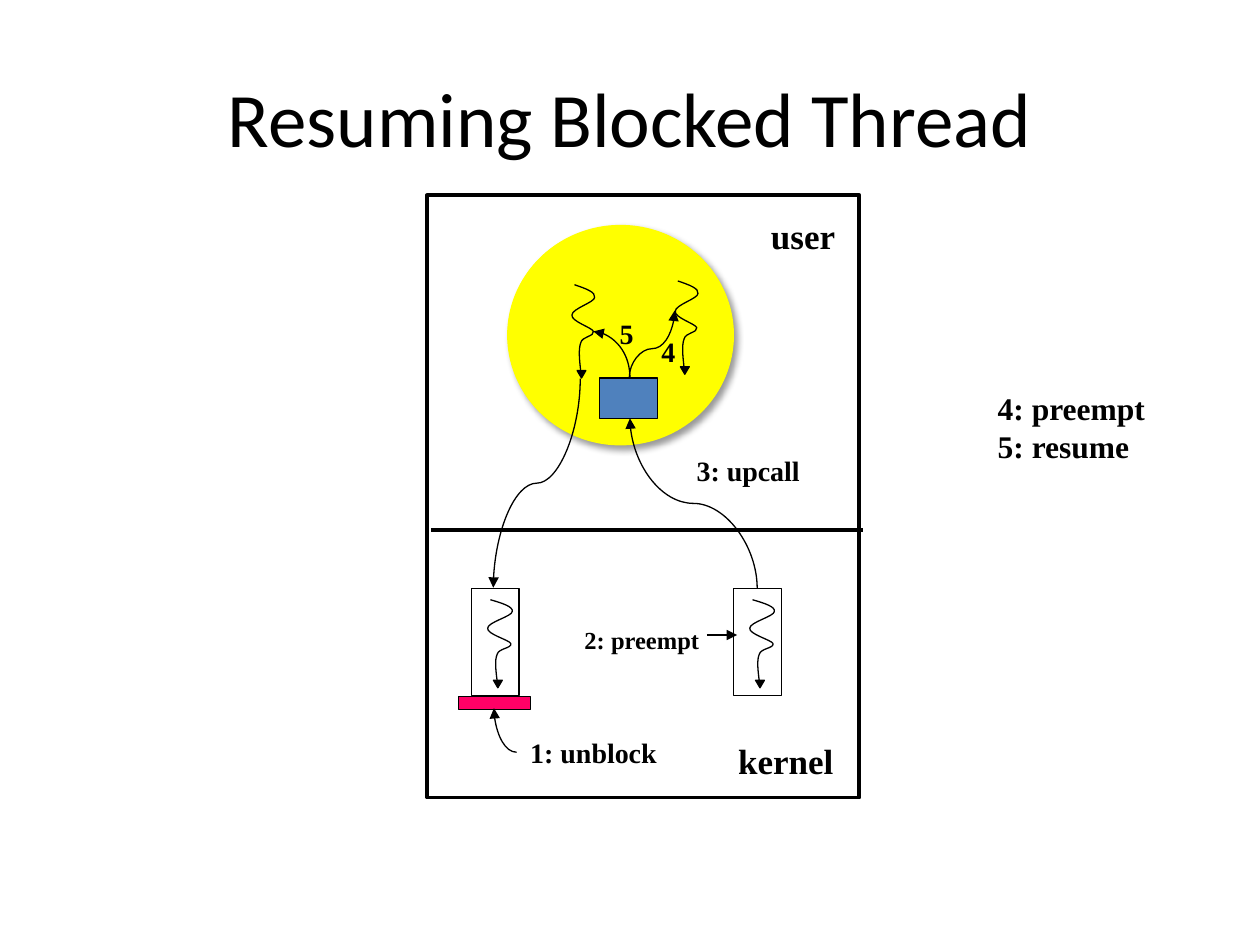
from lxml import etree
from pptx import Presentation
from pptx.dml.color import RGBColor
from pptx.enum import shapes, text
from pptx.oxml import ns
from pptx.util import Inches, Pt

BLACK = RGBColor(0, 0, 0)
YELLOW = RGBColor(0xFF, 0xFF, 0)
BLUE = RGBColor(0x4F, 0x81, 0xBD)
PINK = RGBColor(0xFF, 0, 0x66)
SERIF = "Times New Roman"
KIND = shapes.MSO_SHAPE
LINK = shapes.MSO_CONNECTOR

SQUIGGLE = [
    (0.03, 0), (0.12, 0.03), (0.2, 0.06), (0.19, 0.1),
    (0.19, 0.14), (0.01, 0.19), (0.01, 0.24),
    (0, 0.29), (0.17, 0.34), (0.18, 0.37),
    (0.19, 0.41), (0.09, 0.41), (0.08, 0.46),
    (0.06, 0.51), (0.07, 0.6), (0.08, 0.69),
]
USER_SCALE = (1, 1)
KERNEL_SCALE = (1.08, 0.94)


def add_child(parent, tag, **attributes):
    return etree.SubElement(parent, ns.qn(tag), attributes)


def add_box(page, kind, area, fill=None, line=BLACK, weight=0.75):
    box = page.shapes.add_shape(kind, *map(Inches, area))
    box.shadow.inherit = False
    if fill is None:
        box.fill.background()
    else:
        box.fill.solid()
        box.fill.fore_color.rgb = fill
    box.line.color.rgb = line
    box.line.width = Pt(weight)
    return box


def add_soft_shadow(box):
    effects = box._element.spPr.find(ns.qn("a:effectLst"))
    shadow = add_child(effects, "a:outerShdw", blurRad=str(Pt(4)), dist=str(Pt(3)),
                       dir="2700000", algn="tl", rotWithShape="0")
    color = add_child(shadow, "a:srgbClr", val=str(BLACK))
    add_child(color, "a:alpha", val="40000")


def add_label(page, area, lines, size, font=SERIF, bold=True, title=False):
    box = page.shapes.add_textbox(*map(Inches, area))
    frame = box.text_frame
    frame.text = lines
    frame.word_wrap = title
    if title:
        frame.vertical_anchor = text.MSO_ANCHOR.MIDDLE
    for para in frame.paragraphs:
        para.alignment = text.PP_ALIGN.CENTER if title else text.PP_ALIGN.LEFT
        for span in para.runs:
            span.font.name = font
            span.font.size = Pt(size)
            span.font.bold = bold
            span.font.color.rgb = BLACK


def style_connector(connector, weight, arrow):
    connector.line.color.rgb = BLACK
    connector.line.width = Pt(weight)
    if arrow:
        add_child(connector.line._get_or_add_ln(), "a:tailEnd", type="triangle")
    add_child(connector._element.spPr, "a:effectLst")


def add_line(page, start, end, weight=0.75, arrow=False):
    connector = page.shapes.add_connector(LINK.STRAIGHT, *map(Inches, start + end))
    style_connector(connector, weight, arrow)


def add_curve(page, area, turn, flip=False, bend=None):
    left, top, width, height = area
    connector = page.shapes.add_connector(
        LINK.CURVE, *map(Inches, (left, top, left + width, top + height)))
    properties = connector._element.spPr
    frame = properties.find(ns.qn("a:xfrm"))
    frame.set("rot", str(turn * 60000))
    if flip:
        frame.set("flipH", "1")
    geometry = properties.find(ns.qn("a:prstGeom"))
    if bend is None:
        geometry.set("prst", "curvedConnector2")
    else:
        guides = geometry.get_or_add_avLst()
        add_child(guides, "a:gd", name="adj1", fmla=f"val {round(bend * 100000)}")
    style_connector(connector, 0.75, True)


def add_thread(page, left, top, scale):
    points = [(left + x * scale[0], top + y * scale[1]) for x, y in SQUIGGLE]
    corners = [(Inches(x), Inches(y)) for x, y in points]
    builder = page.shapes.build_freeform(*corners[0])
    builder.add_line_segments(corners[1:], close=False)
    squiggle = builder.convert_to_shape()
    squiggle.shadow.inherit = False
    squiggle.fill.background()
    squiggle.line.color.rgb = BLACK
    squiggle.line.width = Pt(0.75)

    segments = list(squiggle._element.iter(ns.qn("a:lnTo")))
    outline = segments[0].getparent()
    for first in range(0, len(segments), 3):
        curve = add_child(outline, "a:cubicBezTo")
        for segment in segments[first:first + 3]:
            curve.append(segment[0])
            outline.remove(segment)

    tip_x, tip_y = points[-1]
    head = add_box(page, KIND.ISOSCELES_TRIANGLE,
                   (tip_x - 0.03, tip_y - 0.01, 0.07, 0.06), BLACK)
    head.rotation = 180


def add_kernel_thread(page, left):
    add_thread(page, left + 0.12, 4.76, KERNEL_SCALE)
    add_box(page, KIND.RECTANGLE, (left, 4.67, 0.38, 0.85))


def main():
    deck = Presentation()
    deck.slide_width, deck.slide_height = Inches(10), Inches(7.5)
    page = deck.slides.add_slide(deck.slide_layouts[6])

    add_label(page, (0.5, 0.3, 9, 1.25), "Resuming Blocked Thread", 44,
              "Calibri", bold=False, title=True)
    process = add_box(page, KIND.OVAL, (4.03, 1.79, 1.79, 1.74), YELLOW, YELLOW)
    add_soft_shadow(process)
    add_box(page, KIND.RECTANGLE, (3.39, 1.55, 3.43, 4.78), weight=2.25)
    add_line(page, (3.42, 4.21), (6.85, 4.21), weight=2.25)

    add_thread(page, 4.53, 2.26, USER_SCALE)
    add_thread(page, 5.35, 2.23, USER_SCALE)
    add_box(page, KIND.RECTANGLE, (3.64, 5.53, 0.57, 0.1), PINK)
    for left in (3.74, 5.82):
        add_kernel_thread(page, left)
    add_box(page, KIND.RECTANGLE, (4.76, 3, 0.46, 0.32), BLUE)

    add_line(page, (5.61, 5.04), (5.85, 5.04), arrow=True)
    add_curve(page, (3.43, 3.49, 1.66, 0.69), 90, bend=0.5)
    add_curve(page, (4.83, 3.49, 1.35, 1.01), 90, flip=True, bend=0.5)
    add_curve(page, (3.92, 5.62, 0.18, 0.35), 180)
    add_curve(page, (4.91, 2.55, 0.53, 0.36), 270, bend=0.43)
    add_curve(page, (4.67, 2.67, 0.37, 0.29), 90, flip=True)

    for area, words, size in (
        ((6.02, 1.65, 0.71, 0.43), "user", 20),
        ((5.76, 5.82, 0.96, 0.43), "kernel", 20),
        ((4.11, 5.79, 1.21, 0.37), "1: unblock", 16),
        ((4.54, 4.91, 1.11, 0.33), "2: preempt", 14),
        ((5.43, 3.55, 1.02, 0.37), "3: upcall", 16),
        ((5.15, 2.61, 0.31, 0.37), "4", 16),
        ((4.82, 2.46, 0.31, 0.37), "5", 16),
        ((7.82, 3.04, 1.38, 0.7), "4: preempt\n5: resume", 18),
    ):
        add_label(page, area, words, size)

    deck.save("out.pptx")


if __name__ == "__main__":
    main()
